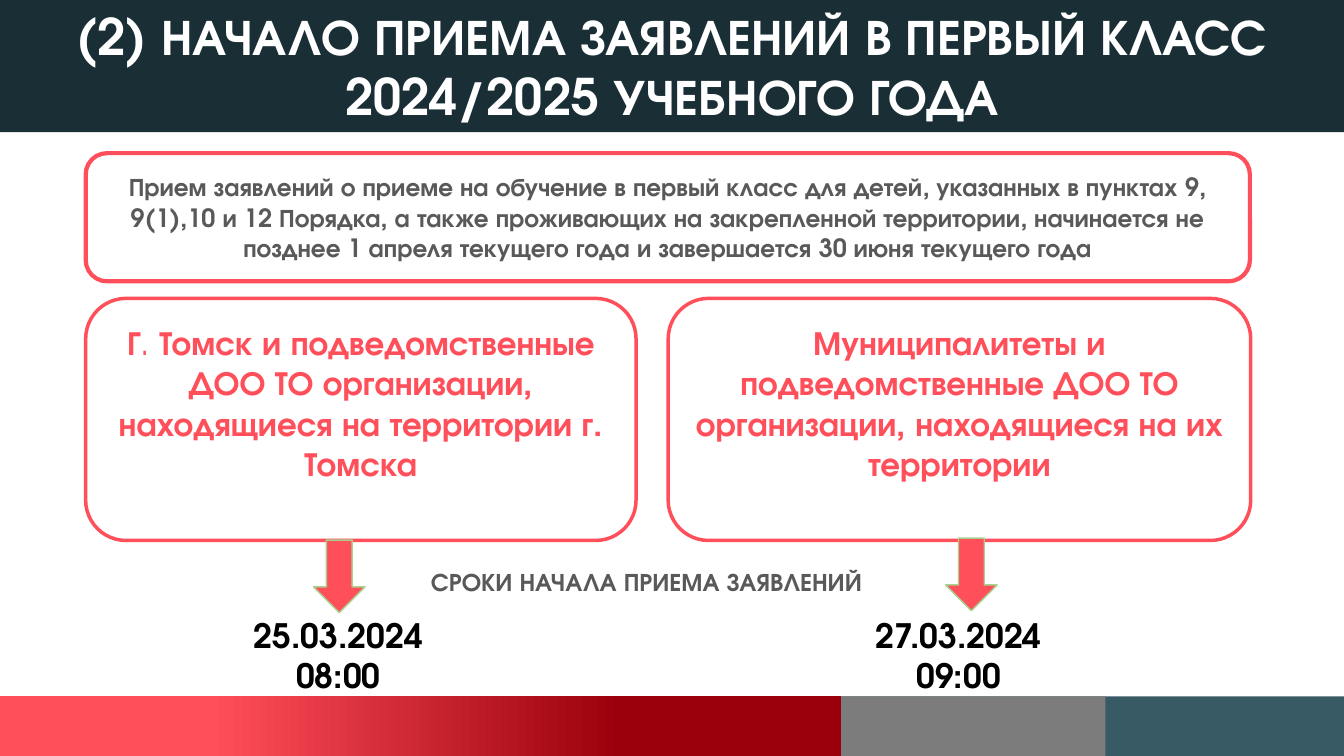
import dataclasses

import pptx
import pptx.dml.color
import pptx.enum.shapes
import pptx.enum.text
import pptx.util

Cm = pptx.util.Cm
Pt = pptx.util.Pt
Color = pptx.dml.color.RGBColor.from_string
Shape = pptx.enum.shapes.MSO_SHAPE
Anchor = pptx.enum.text.MSO_ANCHOR


@dataclasses.dataclass(frozen=True)
class Theme:
    """Colours, font and type sizes of the slide."""
    font: str = "TeX Gyre Adventor"
    coral: str = "FF4F5A"
    crimson: str = "9A000B"
    navy: str = "1A2E35"
    teal: str = "385A64"
    gray: str = "7C7C7C"
    text_gray: str = "595959"
    green: str = "A9D18E"
    white: str = "FFFFFF"
    black: str = "000000"
    title_size: int = 36
    card_size: int = 24
    body_size: int = 18


THEME = Theme()


def apply_format(target, values):
    """Set every attribute named in a dict of format values."""
    for name, value in values.items():
        setattr(target, name, value)


def add_box(slide, kind, box, fill, line=None, line_width=1):
    """Add a preset shape with a plain fill and an optional outline."""
    shape = slide.shapes.add_shape(kind, *map(Cm, box))
    shape.shadow.inherit = False
    shape.fill.solid()
    shape.fill.fore_color.rgb = Color(fill)
    if line:
        shape.line.color.rgb = Color(line)
        shape.line.width = Pt(line_width)
    else:
        shape.line.fill.background()
    return shape


def write_text(shape, paragraphs, size, color, anchor=Anchor.TOP, bottom=0.13):
    """Write centred paragraphs, each a list of (text, bold) runs."""
    frame = shape.text_frame
    apply_format(frame, {"word_wrap": True, "vertical_anchor": anchor,
                         "margin_bottom": Cm(bottom)})
    for index, runs in enumerate(paragraphs):
        paragraph = frame.add_paragraph() if index else frame.paragraphs[0]
        paragraph.alignment = pptx.enum.text.PP_ALIGN.CENTER
        for text, bold in runs:
            run = paragraph.add_run()
            run.text = text
            apply_format(run.font, {"name": THEME.font, "size": Pt(size), "bold": bold})
            run.font.color.rgb = Color(color)


def add_label(slide, box, lines, size, color):
    """Add a text box of bold centred lines."""
    label = slide.shapes.add_textbox(*map(Cm, box))
    write_text(label, [[(line, True)] for line in lines], size, color)


def add_footer(slide):
    """Add the overlapping colour bands along the bottom edge."""
    bands = [(9.14, 33.87, THEME.teal), (6.38, 27.86, THEME.gray), (0, 21.19, THEME.coral)]
    for left, right, color in bands:
        band = add_box(slide, Shape.RECTANGLE, (left, 17.55, right - left, 1.5), color)
    band.fill.gradient()
    band.fill.gradient_angle = 0
    stops = [(0.25, THEME.coral), (0.74, THEME.crimson)]
    for stop, (position, color) in zip(band.fill.gradient_stops, stops):
        stop.position = position
        stop.color.rgb = Color(color)


def add_region(slide, left, width, runs):
    """Add a rounded card naming the organisations of one region."""
    card = add_box(slide, Shape.ROUNDED_RECTANGLE, (left, 7.52, width, 6.1),
                   THEME.white, THEME.coral, 2.5)
    write_text(card, [runs], THEME.card_size, THEME.coral, Anchor.MIDDLE, 0.97)


def add_start(slide, arrow_left, arrow_top, label_left, label_width, lines):
    """Add a down arrow with the start date and time under it."""
    add_box(slide, Shape.DOWN_ARROW, (arrow_left, arrow_top, 1.3, 1.83),
            THEME.coral, THEME.green)
    add_label(slide, (label_left, 15.37, label_width, 2.31), lines,
              THEME.card_size, THEME.black)


def main():
    """Build the slide on the start of first-grade applications."""
    presentation = pptx.Presentation()
    apply_format(presentation, {"slide_width": Cm(33.87), "slide_height": Cm(19.05)})
    slide = presentation.slides.add_slide(presentation.slide_layouts[6])

    add_footer(slide)
    title = add_box(slide, Shape.RECTANGLE, (0, 0, 33.87, 3.33), THEME.navy)
    write_text(title, [[("(2) НАЧАЛО ПРИЕМА ЗАЯВЛЕНИЙ В ПЕРВЫЙ КЛАСС "
                         "2024/2025 УЧЕБНОГО ГОДА", True)]],
               THEME.title_size, THEME.white)

    notice = add_box(slide, Shape.ROUNDED_RECTANGLE, (2.16, 3.86, 29.34, 3.23),
                     THEME.white, THEME.coral, 3)
    write_text(notice, [[("Прием заявлений о приеме на обучение в первый класс для детей, "
                          "указанных в пунктах 9, 9(1),10 и 12 Порядка, а также проживающих "
                          "на закрепленной территории, начинается не позднее 1 апреля "
                          "текущего года и завершается 30 июня текущего года", True)]],
               THEME.body_size, THEME.text_gray, Anchor.MIDDLE)

    add_region(slide, 2.16, 13.87, [
        ("Г", True), (". ", False),
        ("Томск и подведомственные ДОО ТО организации, "
         "находящиеся на территории г. Томска", True)])
    add_region(slide, 16.84, 14.68, [
        ("Муниципалитеты и подведомственные ДОО ТО организации, "
         "находящиеся на их территории", True)])

    add_start(slide, 7.9, 13.61, 3.78, 9.5, ["25.03.2024", "08:00"])
    add_start(slide, 23.83, 13.56, 20.73, 6.86, ["27.03.2024", "09:00"])
    add_label(slide, (10.06, 14.15, 12.47, 1.02), ["СРОКИ НАЧАЛА ПРИЕМА ЗАЯВЛЕНИЙ"],
              THEME.body_size, THEME.text_gray)

    presentation.save("out.pptx")


if __name__ == "__main__":
    main()
